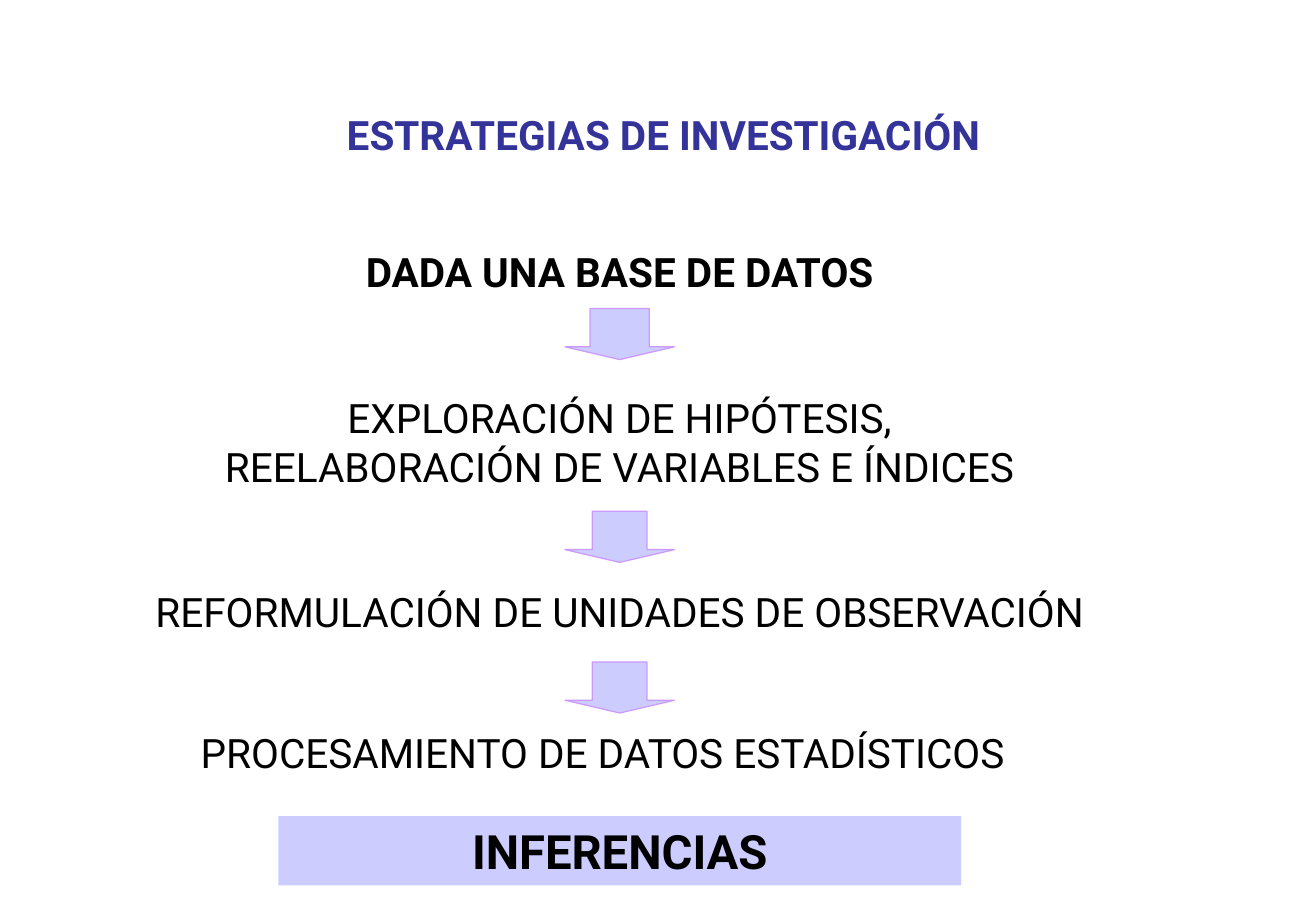
from pptx import Presentation
from pptx.dml.color import RGBColor
from pptx.enum.shapes import MSO_SHAPE
from pptx.enum.text import MSO_ANCHOR, PP_ALIGN
from pptx.util import Inches, Pt

BLACK = RGBColor(0x00, 0x00, 0x00)
NAVY = RGBColor(0x33, 0x33, 0x99)
LAVENDER = RGBColor(0xCC, 0xCC, 0xFF)
VIOLET = RGBColor(0xCC, 0x99, 0xFF)
FONT = "Roboto"

SLIDE_WIDTH, SLIDE_HEIGHT = 10.83, 7.5
FLOW_CENTER = 5.1
ARROW_WIDTH, ARROW_HEIGHT = 0.9, 0.42

# wording, center, top, width, height, bold
STEPS = [
    ("DADA UNA BASE DE DATOS", FLOW_CENTER, 1.88, 8.5, 0.71, True),
    ("EXPLORACIÓN DE HIPÓTESIS, REELABORACIÓN DE VARIABLES E ÍNDICES",
     FLOW_CENTER, 3.19, 7.24, 0.91, False),
    ("REFORMULACIÓN DE UNIDADES DE OBSERVACIÓN", FLOW_CENTER, 4.78, 8.11, 0.51, False),
    ("PROCESAMIENTO DE DATOS ESTADÍSTICOS", 4.96, 5.94, 8, 0.51, False),
]
TITLE = ("ESTRATEGIAS DE INVESTIGACIÓN", 5.46, 0.86, 8.09, 0.51)
CONCLUSION = ("INFERENCIAS", FLOW_CENTER, 6.72, 5.62, 0.57)
# top, share of the width taken by the shaft
ARROWS = [(2.54, 0.54), (4.21, 0.5), (5.45, 0.5)]


def centered(center, top, width, height):
    return [Inches(n) for n in (center - width / 2, top, width, height)]


def write(shape, wording, size=24, color=BLACK, bold=False, anchor=MSO_ANCHOR.TOP):
    frame = shape.text_frame
    frame.word_wrap = True
    frame.vertical_anchor = anchor
    frame.text = wording
    paragraph = frame.paragraphs[0]
    paragraph.alignment = PP_ALIGN.CENTER
    font = paragraph.font
    font.name, font.size, font.bold = FONT, Pt(size), bold
    font.color.rgb = color


def add_filled(slide, preset, box):
    shape = slide.shapes.add_shape(preset, *centered(*box))
    shape.shadow.inherit = False
    shape.fill.solid()
    shape.fill.fore_color.rgb = LAVENDER
    return shape


def main():
    deck = Presentation()
    deck.slide_width, deck.slide_height = Inches(SLIDE_WIDTH), Inches(SLIDE_HEIGHT)
    slide = deck.slides.add_slide(deck.slide_layouts[6])

    for wording, *box, bold in STEPS:
        anchor = MSO_ANCHOR.MIDDLE if bold else MSO_ANCHOR.TOP
        write(slide.shapes.add_textbox(*centered(*box)), wording, bold=bold, anchor=anchor)

    wording, *box = CONCLUSION
    conclusion = add_filled(slide, MSO_SHAPE.RECTANGLE, box)
    conclusion.line.fill.background()
    write(conclusion, wording, size=28, bold=True)

    for top, shaft in ARROWS:
        arrow = add_filled(slide, MSO_SHAPE.DOWN_ARROW,
                           (FLOW_CENTER, top, ARROW_WIDTH, ARROW_HEIGHT))
        arrow.adjustments[0], arrow.adjustments[1] = shaft, 0.25
        arrow.line.color.rgb = VIOLET
        arrow.line.width = Pt(0.75)

    wording, *box = TITLE
    write(slide.shapes.add_textbox(*centered(*box)), wording, color=NAVY, bold=True)

    deck.save("out.pptx")


if __name__ == "__main__":
    main()
